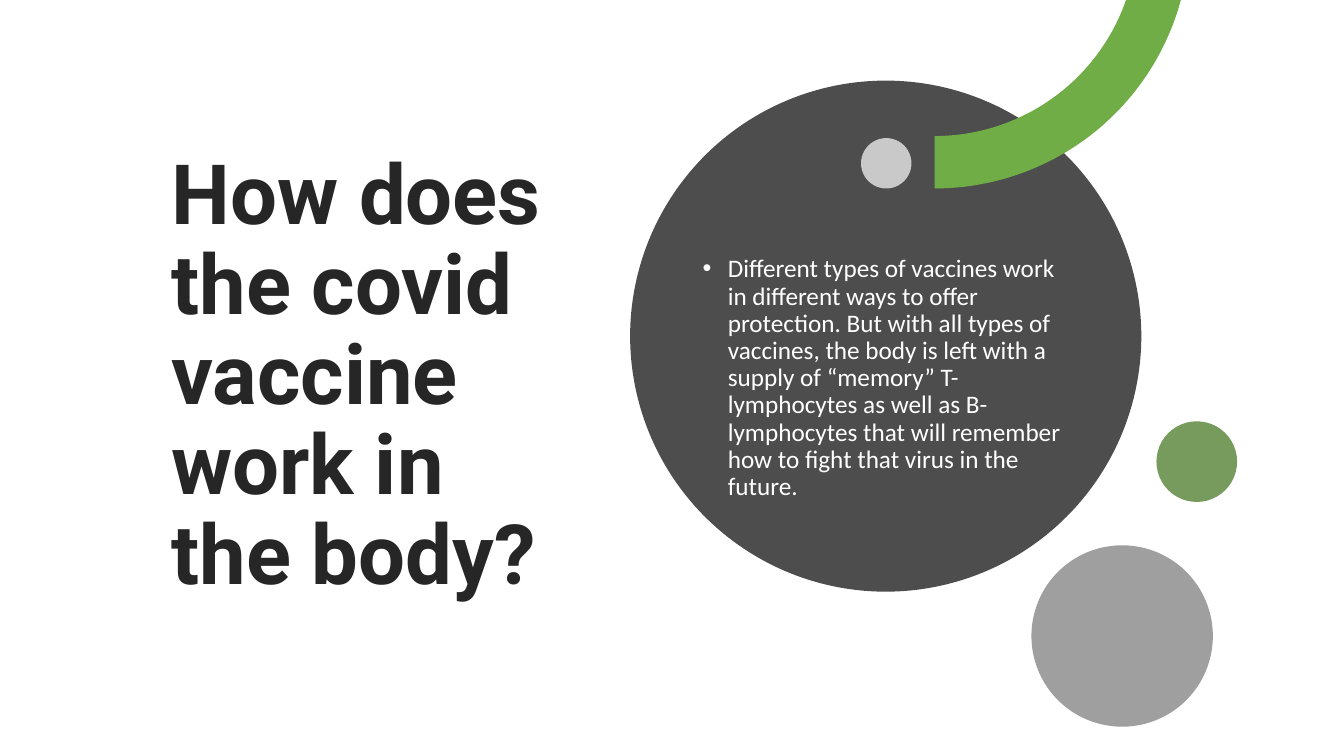
from math import asin, cos, pi, sin

from lxml import etree
from pptx import Presentation
from pptx.dml.color import RGBColor
from pptx.enum.shapes import MSO_SHAPE as Shape
from pptx.enum.text import MSO_ANCHOR as Anchor, MSO_AUTO_SIZE as AutoSize, PP_ALIGN as Align
from pptx.oxml.ns import qn
from pptx.util import Inches, Pt

WHITE = RGBColor(0xFF, 0xFF, 0xFF)
INK = RGBColor(0x26, 0x26, 0x26)
CHARCOAL = RGBColor(0x4D, 0x4D, 0x4D)
GREY = RGBColor(0x40, 0x40, 0x40)
GREEN = RGBColor(0x70, 0xAD, 0x47)
DARK_GREEN = RGBColor(0x54, 0x82, 0x35)

# Content
TITLE = "How does the covid vaccine work in the body?"
BODY = (
    "Different types of vaccines work in different ways to offer protection. "
    "But with all types of vaccines, the body is left with a supply of “memory” "
    "T-lymphocytes as well as B-lymphocytes that will remember how to fight "
    "that virus in the future."
)
TITLE_BOX = (1.6, 1.19, 4.16, 5.11)
BODY_BOX = (6.87, 1.93, 3.92, 3.65)

# Circles: left, top, diameter, colour, opacity in percent
MAIN_CIRCLE = (6.25, 0.8, 5.07, CHARCOAL, 100)
SMALL_CIRCLES = [
    (8.54, 1.37, 0.5, WHITE, 70),
    (11.47, 4.18, 0.8, DARK_GREEN, 80),
    (10.23, 5.41, 1.8, GREY, 50),
]

# Green band: a ring centred above the slide, cut off at the top edge
BAND_CENTRE = (9.27, -0.66)
BAND_RADII = (2.53, 2.01)
BAND_STEPS = 60


def paint(shape, color, opacity=100):
    shape.shadow.inherit = False
    shape.fill.solid()
    shape.fill.fore_color.rgb = color
    shape.line.fill.background()
    if opacity < 100:
        color_element = shape._element.spPr.find(qn("a:solidFill"))[0]
        etree.SubElement(color_element, qn("a:alpha"), val=str(opacity * 1000))


def add_circle(slide, left, top, diameter, color, opacity):
    size = Inches(diameter)
    circle = slide.shapes.add_shape(Shape.OVAL, Inches(left), Inches(top), size, size)
    paint(circle, color, opacity)


def band_arc(radius):
    """Points from straight below the centre to the top edge of the slide."""
    x, y = BAND_CENTRE
    end = asin(-y / radius)
    angles = [pi / 2 + (end - pi / 2) * step / BAND_STEPS for step in range(BAND_STEPS + 1)]
    return [(Inches(x + radius * cos(a)), Inches(y + radius * sin(a))) for a in angles]


def add_band(slide):
    outer, inner = [band_arc(radius) for radius in BAND_RADII]
    builder = slide.shapes.build_freeform(*outer[0])
    builder.add_line_segments(outer[1:] + inner[::-1], close=True)
    paint(builder.convert_to_shape(), GREEN)


def write(shape, text, font_name, size, color, bold=False):
    frame = shape.text_frame
    frame.word_wrap = True
    frame.auto_size = AutoSize.NONE
    frame.vertical_anchor = Anchor.MIDDLE
    paragraph = frame.paragraphs[0]
    paragraph.text = text
    paragraph.alignment = Align.LEFT
    paragraph.line_spacing = 0.9
    font = paragraph.font
    font.name, font.size, font.bold = font_name, Pt(size), bold
    font.color.rgb = color
    return paragraph


def main():
    presentation = Presentation()
    presentation.slide_width = Inches(13.33)
    presentation.slide_height = Inches(7.5)
    slide = presentation.slides.add_slide(presentation.slide_layouts[5])

    # Title
    title = slide.shapes.title
    title.left, title.top, title.width, title.height = map(Inches, TITLE_BOX)
    write(title, TITLE, "Roboto", 59.4, INK, bold=True)

    # Circles and band
    add_circle(slide, *MAIN_CIRCLE)
    add_band(slide)
    for circle in SMALL_CIRCLES:
        add_circle(slide, *circle)

    # Bulleted text
    body = slide.shapes.add_textbox(*map(Inches, BODY_BOX))
    paragraph = write(body, BODY, "Calibri", 18, WHITE)
    paragraph.space_before = Pt(10)
    properties = paragraph._p.get_or_add_pPr()
    properties.set("marL", str(Inches(0.25)))
    properties.set("indent", str(Inches(-0.25)))
    bullet_font = etree.Element(qn("a:buFont"), typeface="Arial")
    bullet = etree.Element(qn("a:buChar"), char="•")
    properties.find(qn("a:spcBef")).addnext(bullet_font)
    bullet_font.addnext(bullet)

    presentation.save("out.pptx")


if __name__ == "__main__":
    main()
